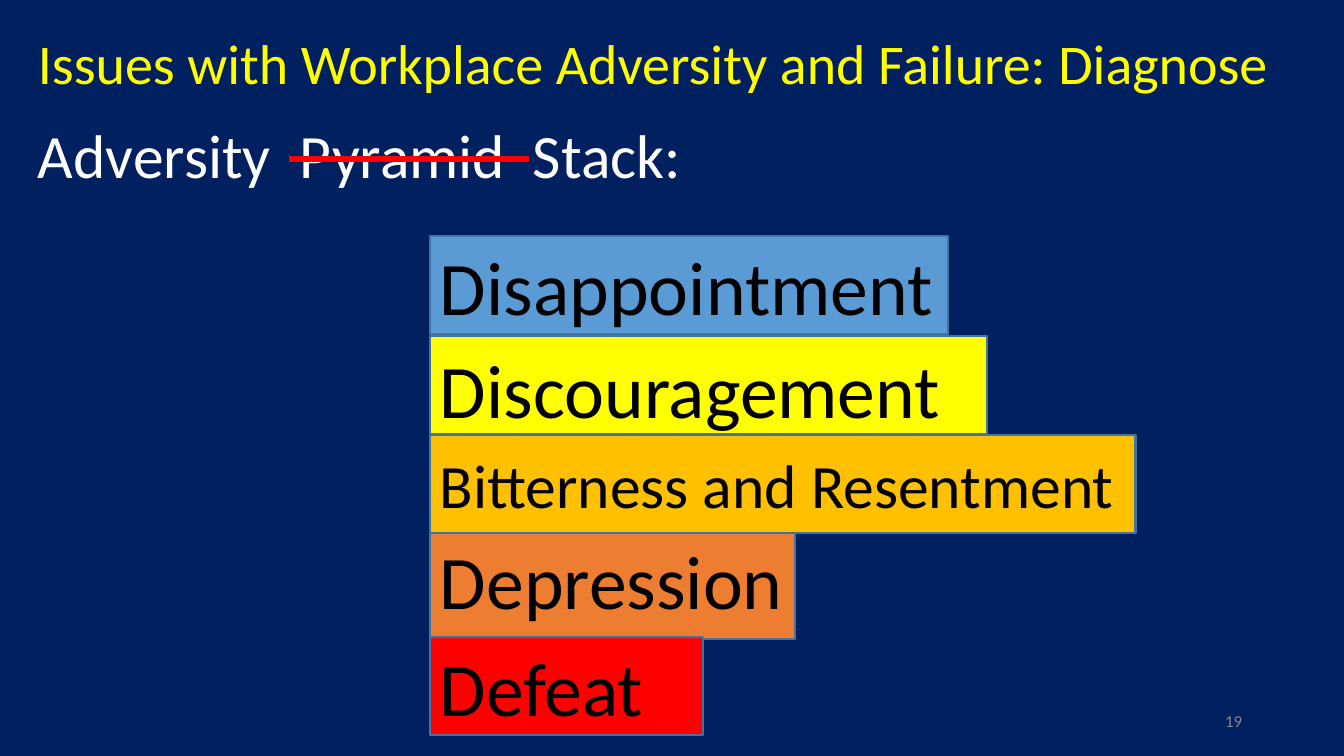
import pptx
import pptx.dml.color
import pptx.enum.shapes
import pptx.enum.text
import pptx.oxml.ns
import pptx.util
from lxml import etree

SCALE = 914400 / 100.8
COLORS = {
    "background": "002060", "title": "FFFF00", "subtitle": "FFFFFF",
    "label": "000000", "page": "888888", "border": "43739E", "strike": "FF0000",
}
STACK = [
    ("Disappointment", "5B9BD5", 236, 518, 98, 54, 0),
    ("Discouragement", "FFFF00", 336, 557, 98, 54, 6),
    ("Bitterness and Resentment", "FFC000", 435, 706, 98, 44, 0),
    ("Depression", "ED7D31", 533, 365, 106, 54, -14),
    ("Defeat", "FF0000", 637, 273, 98, 54, 0),
]


def px(length):
    """Turn pixels into EMU."""
    return pptx.util.Emu(round(length * SCALE))


def rgb(value):
    """Turn a hex string into a colour."""
    return pptx.dml.color.RGBColor.from_string(value)


def write(paragraph, text, *, size, color, align="LEFT", before=0, tabs=()):
    """Write one formatted paragraph, with tab stops given in pixels."""
    if tabs:
        tab_list = etree.SubElement(
            paragraph._p.get_or_add_pPr(), pptx.oxml.ns.qn("a:tabLst"))
        for stop in tabs:
            etree.SubElement(tab_list, pptx.oxml.ns.qn("a:tab"),
                             pos=str(px(stop)), algn="l")
    paragraph.alignment = getattr(pptx.enum.text.PP_ALIGN, align)
    if before:
        paragraph.space_before = pptx.util.Pt(before)
    run = paragraph.add_run()
    run.text = text
    run.font.name = "Calibri"
    run.font.size = pptx.util.Pt(size)
    run.font.color.rgb = rgb(color)


def add_heading(slide, left, top, width, height):
    """Place the title, the subtitle and the line that strikes out a word."""
    heading = slide.shapes.add_textbox(px(left), px(top), px(width), px(height))
    frame = heading.text_frame
    frame.word_wrap = True
    write(frame.paragraphs[0], "Issues with Workplace Adversity and Failure: Diagnose",
          size=40, color=COLORS["title"])
    write(frame.add_paragraph(), "Adversity\tPyramid\tStack:", size=44,
          color=COLORS["subtitle"], before=14.6, tabs=(262, 495))
    strike = slide.shapes.add_connector(
        pptx.enum.shapes.MSO_CONNECTOR.STRAIGHT,
        px(left + 261), px(top + 135), px(left + 501), px(top + 135))
    strike.line.color.rgb = rgb(COLORS["strike"])
    strike.line.width = pptx.util.Pt(4)
    etree.SubElement(strike._element.spPr, pptx.oxml.ns.qn("a:effectLst"))


def add_level(slide, left, top, width, height, *, label, fill, size, shift):
    """Place one labelled level; shift is added inset above or below its text."""
    level = slide.shapes.add_shape(
        pptx.enum.shapes.MSO_SHAPE.RECTANGLE, px(left), px(top), px(width), px(height))
    level.shadow.inherit = False
    level.fill.solid()
    level.fill.fore_color.rgb = rgb(fill)
    level.line.color.rgb = rgb(COLORS["border"])
    level.line.width = pptx.util.Pt(2)
    frame = level.text_frame
    frame.word_wrap = True
    frame.vertical_anchor = pptx.enum.text.MSO_ANCHOR.MIDDLE
    frame.margin_left = frame.margin_right = px(10)
    frame.margin_top = px(max(shift, 0))
    frame.margin_bottom = px(max(-shift, 0))
    write(frame.paragraphs[0], label, size=size, color=COLORS["label"])


def add_stack(slide, left):
    """Place the levels of the stack along one left edge."""
    for label, fill, top, width, height, size, shift in STACK:
        add_level(slide, left, top, width, height,
                  label=label, fill=fill, size=size, shift=shift)


def add_page_number(slide, left, top, width, height):
    """Place the page number."""
    page = slide.shapes.add_textbox(px(left), px(top), px(width), px(height))
    page.text_frame.word_wrap = True
    page.text_frame.vertical_anchor = pptx.enum.text.MSO_ANCHOR.MIDDLE
    write(page.text_frame.paragraphs[0], "19", size=12,
          color=COLORS["page"], align="RIGHT")


def main():
    """Build and save the slide."""
    deck = pptx.Presentation()
    deck.slide_width, deck.slide_height = px(1344), px(756)
    slide = deck.slides.add_slide(deck.slide_layouts[6])
    slide.background.fill.solid()
    slide.background.fill.fore_color.rgb = rgb(COLORS["background"])
    add_heading(slide, 28, 24, 1324, 308)
    add_page_number(slide, 950, 701, 302, 40)
    add_stack(slide, 430)
    deck.save("out.pptx")


if __name__ == "__main__":
    main()
